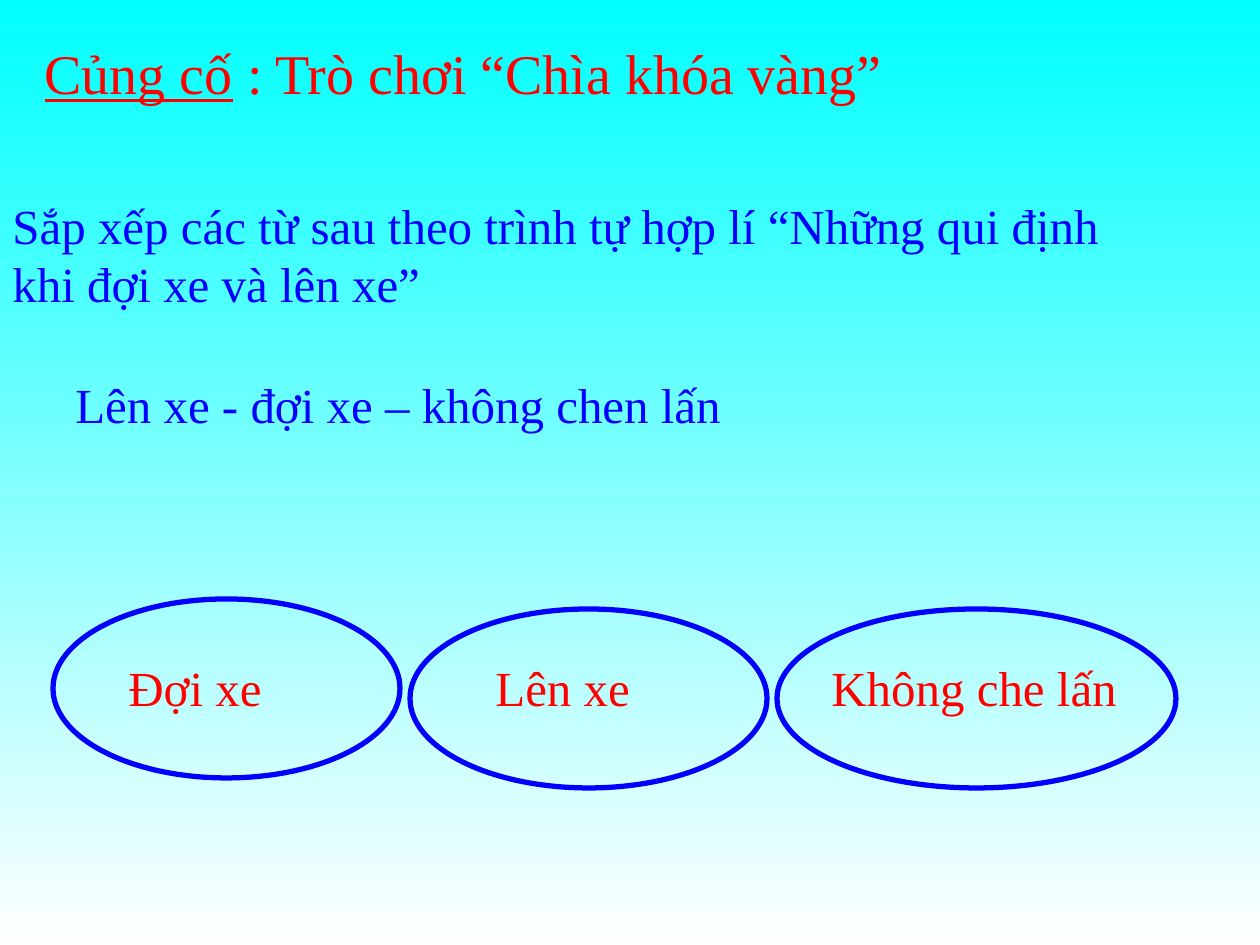
import pptx
import pptx.util
import pptx.dml.color
import pptx.enum.shapes
import pptx.enum.text

PX = 914400 / 126
RGB = pptx.dml.color.RGBColor.from_string
THEME = {
    "font": "Times New Roman",
    "red": RGB("FF0000"),
    "blue": RGB("0000FF"),
    "sky": (RGB("00FFFF"), RGB("FFFFFF")),
    "title": pptx.util.Pt(32),
    "body": pptx.util.Pt(28),
    "before": pptx.util.Pt(3),
    "line": pptx.util.Pt(3),
}


def px(*values):
    return [pptx.util.Emu(round(v * PX)) for v in values]


def write(sp, runs, size, color):
    tf = sp.text_frame
    frame_format = {
        "word_wrap": True,
        "auto_size": pptx.enum.text.MSO_AUTO_SIZE.SHAPE_TO_FIT_TEXT,
        "vertical_anchor": pptx.enum.text.MSO_ANCHOR.TOP,
    }
    for name, value in frame_format.items():
        setattr(tf, name, value)
    p = tf.paragraphs[0]
    p.alignment = pptx.enum.text.PP_ALIGN.LEFT
    p.space_before = THEME["before"]
    for text, underline in runs:
        r = p.add_run()
        r.text = text
        r.font.color.rgb = THEME[color]
        font_format = {"name": THEME["font"], "size": THEME[size], "underline": underline}
        for name, value in font_format.items():
            setattr(r.font, name, value)


prs = pptx.Presentation()
prs.slide_width, prs.slide_height = px(1260, 945)
s = prs.slides.add_slide(prs.slide_layouts[5])

fill = s.background.fill
fill.gradient()
fill.gradient_angle = 270
for stop, color in zip(fill.gradient_stops, THEME["sky"]):
    stop.color.rgb = color

title = s.shapes.title
title.left, title.top, title.width, title.height = px(32, 32, 987, 79)
write(title, [("Củng cố", True), (" : Trò chơi “Chìa khóa vàng”", False)], "title", "red")

instructions = [
    ("Sắp xếp các từ sau theo trình tự hợp lí “Những qui định khi đợi xe và lên xe”",
     (0, 189, 1166, 130)),
    ("Lên xe - đợi xe – không chen lấn", (63, 368, 1008, 72)),
]
for text, box in instructions:
    write(s.shapes.add_textbox(*px(*box)), [(text, False)], "body", "blue")

answers = [
    ("Đợi xe", (53, 599, 347, 179), (116, 651, 284, 72)),
    ("Lên xe", (410, 609, 357, 179), (483, 651, 284, 72)),
    ("Không che lấn", (777, 609, 399, 179), (819, 651, 347, 72)),
]
for text, oval, box in reversed(answers):
    sp = s.shapes.add_shape(pptx.enum.shapes.MSO_SHAPE.OVAL, *px(*oval))
    sp.shadow.inherit = False
    sp.fill.background()
    sp.line.color.rgb = THEME["blue"]
    sp.line.width = THEME["line"]

for text, oval, box in answers:
    write(s.shapes.add_textbox(*px(*box)), [(text, False)], "body", "red")

prs.save("out.pptx")
